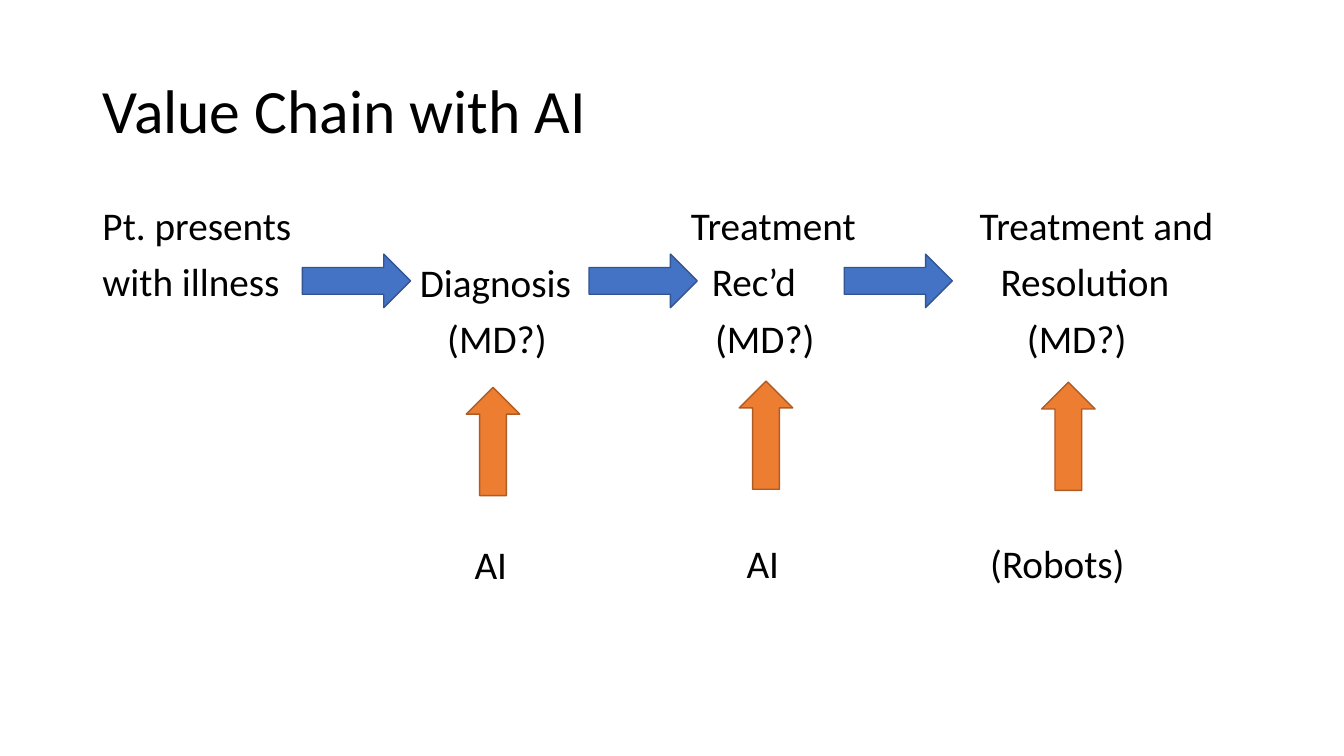
from pptx import Presentation
from pptx.dml.color import RGBColor
from pptx.enum.shapes import MSO_SHAPE
from pptx.enum.text import MSO_ANCHOR, MSO_AUTO_SIZE, PP_ALIGN
from pptx.oxml import parse_xml
from pptx.oxml.ns import nsdecls
from pptx.util import Pt

PX = 9525
LONG, SHORT = 103, 51
TOP, PITCH = 192, 54
FONT = "Calibri"
COLORS = {
    "text": "000000",
    "step": "4472C4",
    "step edge": "325491",
    "help": "ED7D31",
    "help edge": "AF5C24",
}
START = [(0, 10, "Pt. presents"), (0, 10, "with illness")]
STAGES = [
    (400, 1, 170, [(0, 10, "Diagnosis"), (26, 10, "(MD?)"), (52, 131, "AI")]),
    (658, 0, 190, [(0, 10, "Treatment"), (20, 10, "Rec’d"),
                   (23, 10, "(MD?)"), (53, 131, "AI")]),
    (933, 0, 259, [(0, 10, "Treatment and"), (20, 10, "Resolution"),
                   (45, 10, "(MD?)"), (10, 131, "(Robots)")]),
]
STEPS = [(288, 242), (561, 242), (804, 242)]
HELPS = [(444, 369), (704, 363), (992, 364)]


def color(name):
    return RGBColor.from_string(COLORS[name])


def place(shape, x, y, w, h):
    shape.left, shape.top = x * PX, y * PX
    shape.width, shape.height = w * PX, h * PX


def add_run(para, text, size):
    run = para.add_run()
    run.text = text
    run.font.name = FONT
    run.font.size = Pt(size)
    run.font.color.rgb = color("text")


def set_para(para, before, inset):
    para.alignment = PP_ALIGN.LEFT
    para.line_spacing = 0.9
    para.space_before = Pt(before)
    props = para._p.get_or_add_pPr()
    props.set("marL", str(inset * PX))
    props.set("indent", "0")
    props.append(parse_xml(f"<a:buNone {nsdecls('a')}/>"))


def set_frame(frame, anchor):
    frame.auto_size = MSO_AUTO_SIZE.NONE
    frame.word_wrap = True
    frame.vertical_anchor = anchor


def fill_title(title):
    place(title, 88, 39, 1104, 139)
    set_frame(title.text_frame, MSO_ANCHOR.MIDDLE)
    para = title.text_frame.paragraphs[0]
    set_para(para, 0, 0)
    add_run(para, "Value Chain with AI", 44)


def fill_lines(frame, lines):
    set_frame(frame, MSO_ANCHOR.TOP)
    for row, (inset, before, text) in enumerate(lines):
        para = frame.add_paragraph() if row else frame.paragraphs[0]
        set_para(para, before, inset)
        add_run(para, text, 28)


def add_stage(slide, x, row, w, lines):
    y = TOP + row * PITCH
    box = slide.shapes.add_textbox(x * PX, y * PX, w * PX, (400 - row * PITCH) * PX)
    box.text_frame.margin_left = box.text_frame.margin_right = 0
    fill_lines(box.text_frame, lines)


def add_arrow(slide, kind, x, y, w, h, name):
    arrow = slide.shapes.add_shape(kind, x * PX, y * PX, w * PX, h * PX)
    arrow.shadow.inherit = False
    arrow.fill.solid()
    arrow.fill.fore_color.rgb = color(name)
    arrow.line.color.rgb = color(name + " edge")
    arrow.line.width = Pt(1)


def main():
    deck = Presentation()
    deck.slide_width, deck.slide_height = 1280 * PX, 720 * PX
    slide = deck.slides.add_slide(deck.slide_layouts[1])
    fill_title(slide.shapes.title)
    body = slide.placeholders[1]
    place(body, 88, TOP, 210, 120)
    fill_lines(body.text_frame, START)
    for stage in STAGES:
        add_stage(slide, *stage)
    for x, y in STEPS:
        add_arrow(slide, MSO_SHAPE.RIGHT_ARROW, x, y, LONG, SHORT, "step")
    for x, y in HELPS:
        add_arrow(slide, MSO_SHAPE.UP_ARROW, x, y, SHORT, LONG, "help")
    deck.save("out.pptx")


if __name__ == "__main__":
    main()
